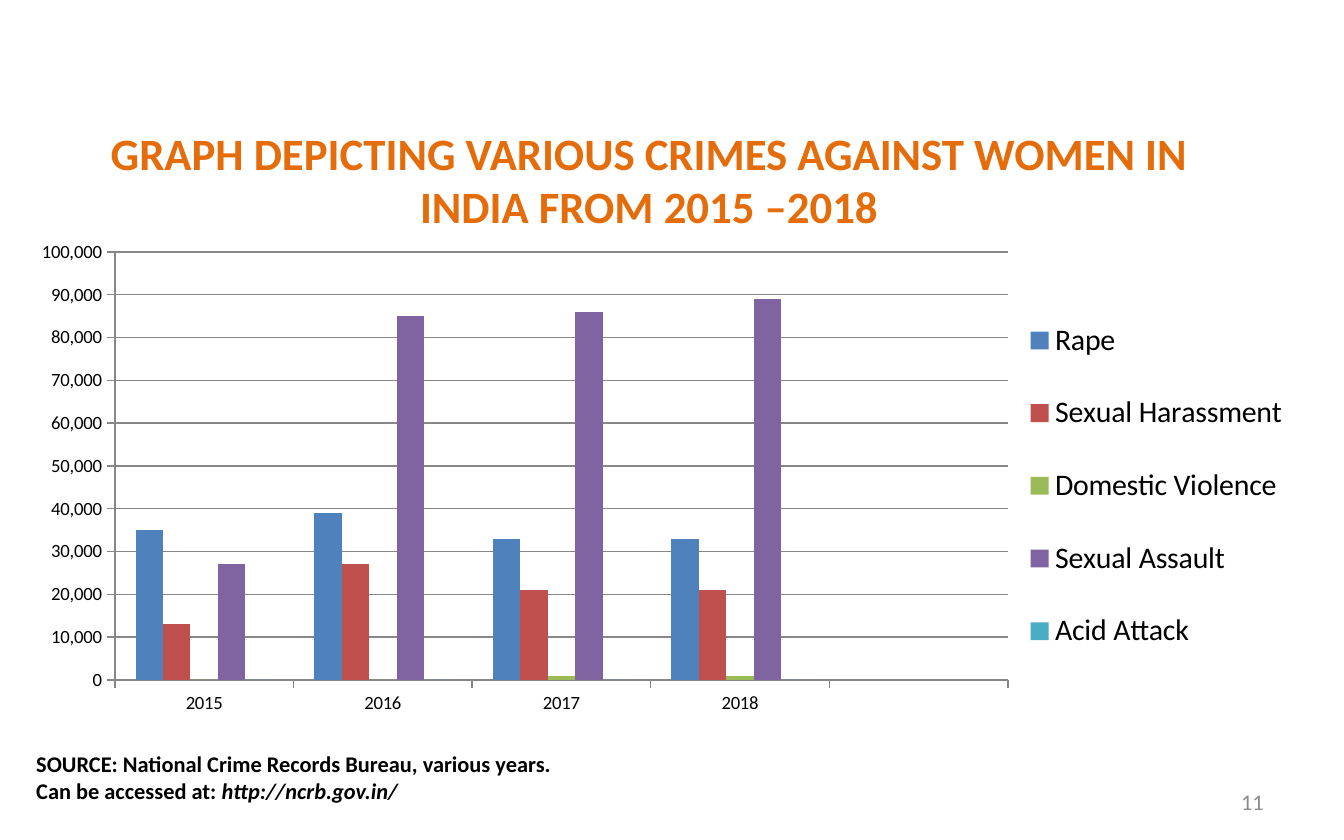
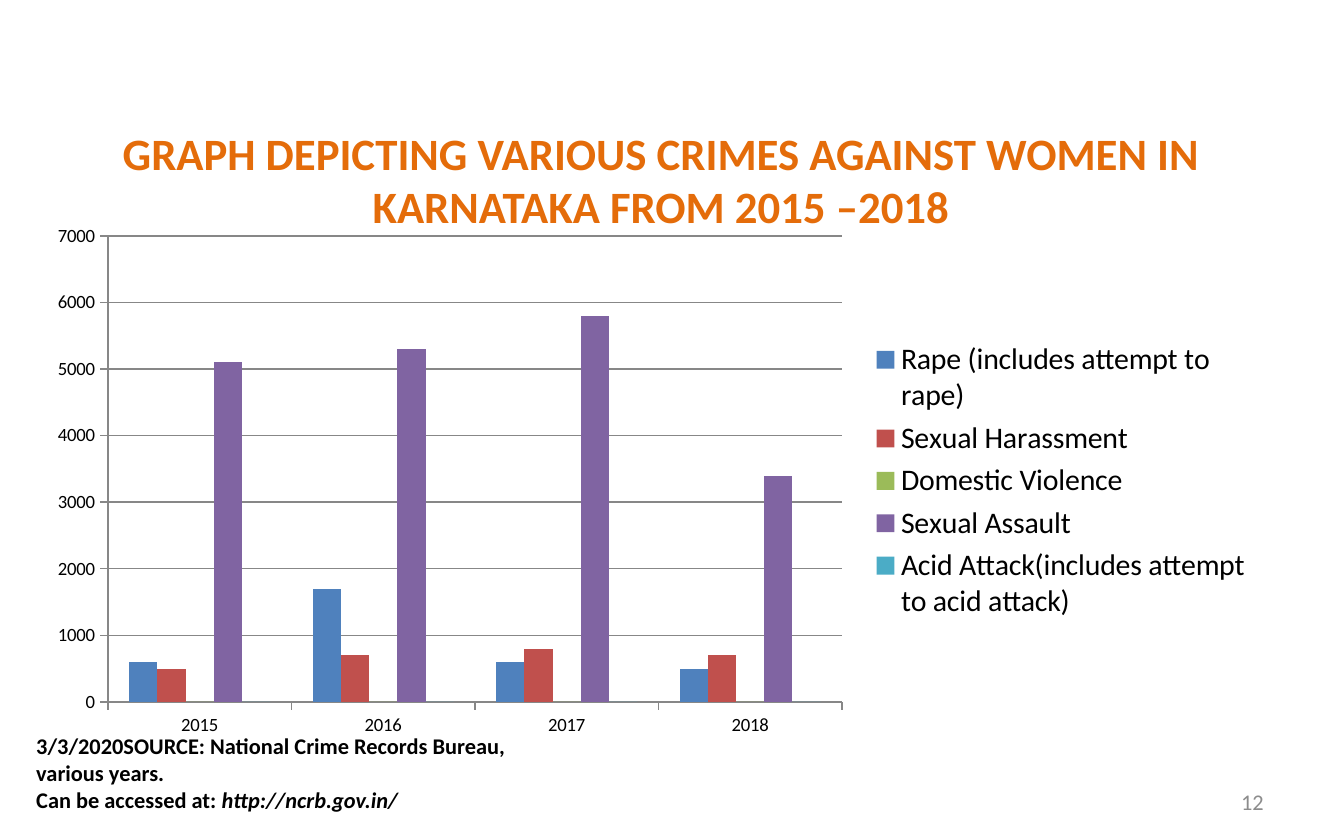
from dataclasses import dataclass

from lxml import etree
from pptx import Presentation
from pptx import util as u
from pptx.chart.data import CategoryChartData
from pptx.dml.color import RGBColor
from pptx.enum import chart as charts, text
from pptx.oxml.ns import qn

PX = 914400 / 134.4
YEARS = ["2015", "2016", "2017", "2018"]
LINK = "http://ncrb.gov.in/"

SLIDES = [
    dict(
        title="GRAPH DEPICTING VARIOUS CRIMES AGAINST WOMEN IN INDIA FROM 2015 –2018",
        title_left=44,
        source="SOURCE: National Crime Records Bureau, various years.",
        source_box=(23, 744, 560, 80),
        number="11",
        chart_box=(0, 230, 1344, 517),
        plot=(115, 252, 893, 428),
        legend=(1022, 286, 269, 400),
        years=YEARS + [""],
        top=100000, step=10000, number_format="#,##0",
        crimes=[
            ("Rape", [35000, 39000, 33000, 33000, None]),
            ("Sexual Harassment", [13000, 27000, 21000, 21000, None]),
            ("Domestic Violence", [0, 0, 1000, 1000, None]),
            ("Sexual Assault", [27000, 85000, 86000, 89000, None]),
            ("Acid Attack", [0, 0, 0, 0, None]),
        ],
    ),
    dict(
        title="GRAPH DEPICTING VARIOUS CRIMES AGAINST WOMEN IN KARNATAKA FROM 2015 –2018",
        title_left=56,
        source="3/3/2020SOURCE: National Crime Records Bureau, various years.",
        source_box=(23, 726, 504, 98),
        number="12",
        chart_box=(34, 215, 1232, 532),
        plot=(108, 236, 734, 466),
        legend=None,
        years=YEARS,
        top=7000, step=1000, number_format="General",
        crimes=[
            ("Rape (includes attempt to rape)", [600, 1700, 600, 500]),
            ("Sexual Harassment", [500, 700, 800, 700]),
            ("Domestic Violence", [0, 0, 0, 0]),
            ("Sexual Assault", [5100, 5300, 5800, 3400]),
            ("Acid Attack(includes attempt to acid attack)", [0, 0, 0, 0]),
        ],
    ),
]


@dataclass(frozen=True)
class Theme:
    font: str = "Calibri"
    title: str = "E46C0A"
    ink: str = "000000"
    muted: str = "8C8C8C"
    grid: str = "878787"
    series: tuple = ("4F81BD", "C0504D", "9BBB59", "8064A2", "4BACC6")
    title_size: int = 24
    note_size: int = 12
    axis_size: int = 10
    legend_size: int = 16


THEME = Theme()


def emu(*lengths):
    return [u.Emu(round(length * PX)) for length in lengths]


def style(font, size, color, bold=False, italic=False):
    font.name = THEME.font
    font.size = u.Pt(size)
    font.color.rgb = RGBColor.from_string(color)
    font.bold = bold
    font.italic = italic


def add_paragraph_box(slide, box, align, anchor):
    frame = slide.shapes.add_textbox(*emu(*box)).text_frame
    frame.word_wrap = True
    frame.vertical_anchor = anchor
    paragraph = frame.paragraphs[0]
    paragraph.alignment = align
    return paragraph


def add_run(paragraph, words, *look, **emphasis):
    run = paragraph.add_run()
    run.text = words
    style(run.font, *look, **emphasis)


def place(parent, index, chart_box, part, inner=False):
    for old in parent.findall(qn("c:layout")):
        parent.remove(old)
    layout = etree.Element(qn("c:layout"))
    manual = etree.SubElement(layout, qn("c:manualLayout"))
    left, top, width, height = chart_box
    values = [("layoutTarget", "inner")] if inner else []
    values += [("xMode", "edge"), ("yMode", "edge")]
    values += [
        ("x", (part[0] - left) / width),
        ("y", (part[1] - top) / height),
        ("w", part[2] / width),
        ("h", part[3] / height),
    ]
    for tag, value in values:
        etree.SubElement(manual, qn(f"c:{tag}")).set("val", str(value))
    parent.insert(index, layout)


def draw_line(line):
    line.color.rgb = RGBColor.from_string(THEME.grid)
    line.width = u.Pt(0.75)


def add_crime_chart(slide, content):
    data = CategoryChartData(number_format=content["number_format"])
    data.categories = content["years"]
    for crime, counts in content["crimes"]:
        data.add_series(crime, counts)
    chart = slide.shapes.add_chart(
        charts.XL_CHART_TYPE.COLUMN_CLUSTERED, *emu(*content["chart_box"]), data
    ).chart
    chart.has_title = False
    style(chart.font, THEME.axis_size, THEME.ink)

    bars = chart.plots[0]
    bars.gap_width = 150
    bars.overlap = 0
    bars.vary_by_categories = False
    for crime, color in zip(bars.series, THEME.series):
        crime.format.fill.solid()
        crime.format.fill.fore_color.rgb = RGBColor.from_string(color)
        crime.invert_if_negative = False

    counts_axis = chart.value_axis
    counts_axis.minimum_scale = 0
    counts_axis.maximum_scale = content["top"]
    counts_axis.major_unit = content["step"]
    counts_axis.tick_labels.number_format = content["number_format"]
    counts_axis.tick_labels.number_format_is_linked = False
    counts_axis.has_major_gridlines = True
    draw_line(counts_axis.major_gridlines.format.line)
    for axis in (counts_axis, chart.category_axis):
        axis.major_tick_mark = charts.XL_TICK_MARK.OUTSIDE
        draw_line(axis.format.line)

    chart.has_legend = True
    legend = chart.legend
    legend.position = charts.XL_LEGEND_POSITION.RIGHT
    legend.include_in_layout = False
    style(legend.font, THEME.legend_size, THEME.ink)

    plot_area = chart.element.find(".//" + qn("c:plotArea"))
    place(plot_area, 0, content["chart_box"], content["plot"], inner=True)
    if content["legend"]:
        legend_part = chart.element.find(".//" + qn("c:legend"))
        place(legend_part, 1, content["chart_box"], content["legend"])


def add_crime_slide(deck, content):
    slide = deck.slides.add_slide(deck.slide_layouts[6])
    align, anchor = text.PP_ALIGN, text.MSO_ANCHOR

    title = add_paragraph_box(
        slide, (content["title_left"], 109, 1210, 140), align.CENTER, anchor.MIDDLE
    )
    add_run(title, content["title"], THEME.title_size, THEME.title, bold=True)

    source = add_paragraph_box(slide, content["source_box"], align.LEFT, anchor.TOP)
    note = (THEME.note_size, THEME.ink)
    add_run(source, content["source"], *note, bold=True)
    source.add_line_break()
    add_run(source, "Can be accessed at:", *note, bold=True)
    add_run(source, " " + LINK, *note, bold=True, italic=True)

    number = add_paragraph_box(slide, (963, 779, 314, 45), align.RIGHT, anchor.MIDDLE)
    add_run(number, content["number"], THEME.note_size, THEME.muted)

    add_crime_chart(slide, content)


def main():
    deck = Presentation()
    deck.slide_width, deck.slide_height = emu(1344, 840)
    for content in SLIDES:
        add_crime_slide(deck, content)
    deck.save("out.pptx")


if __name__ == "__main__":
    main()
